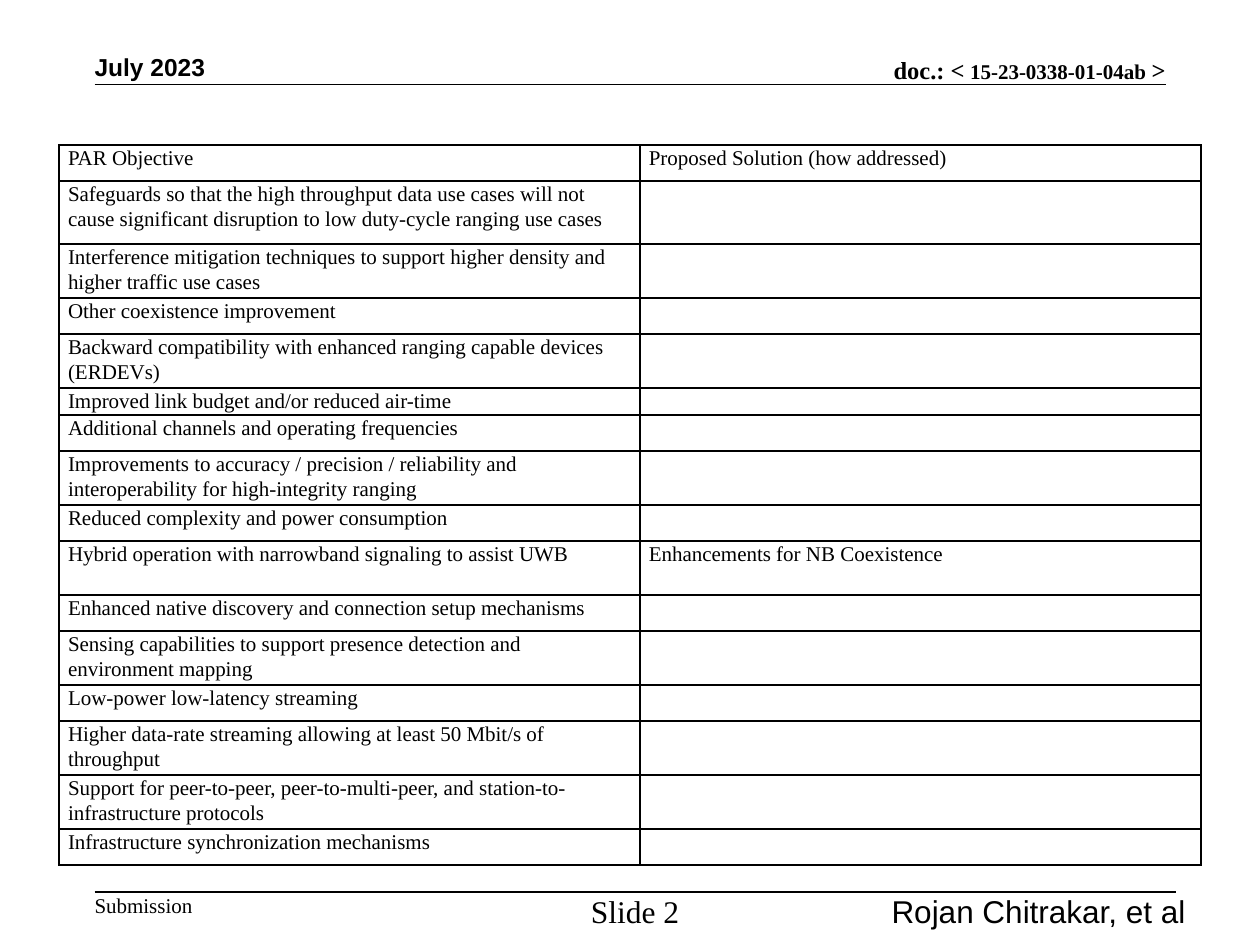
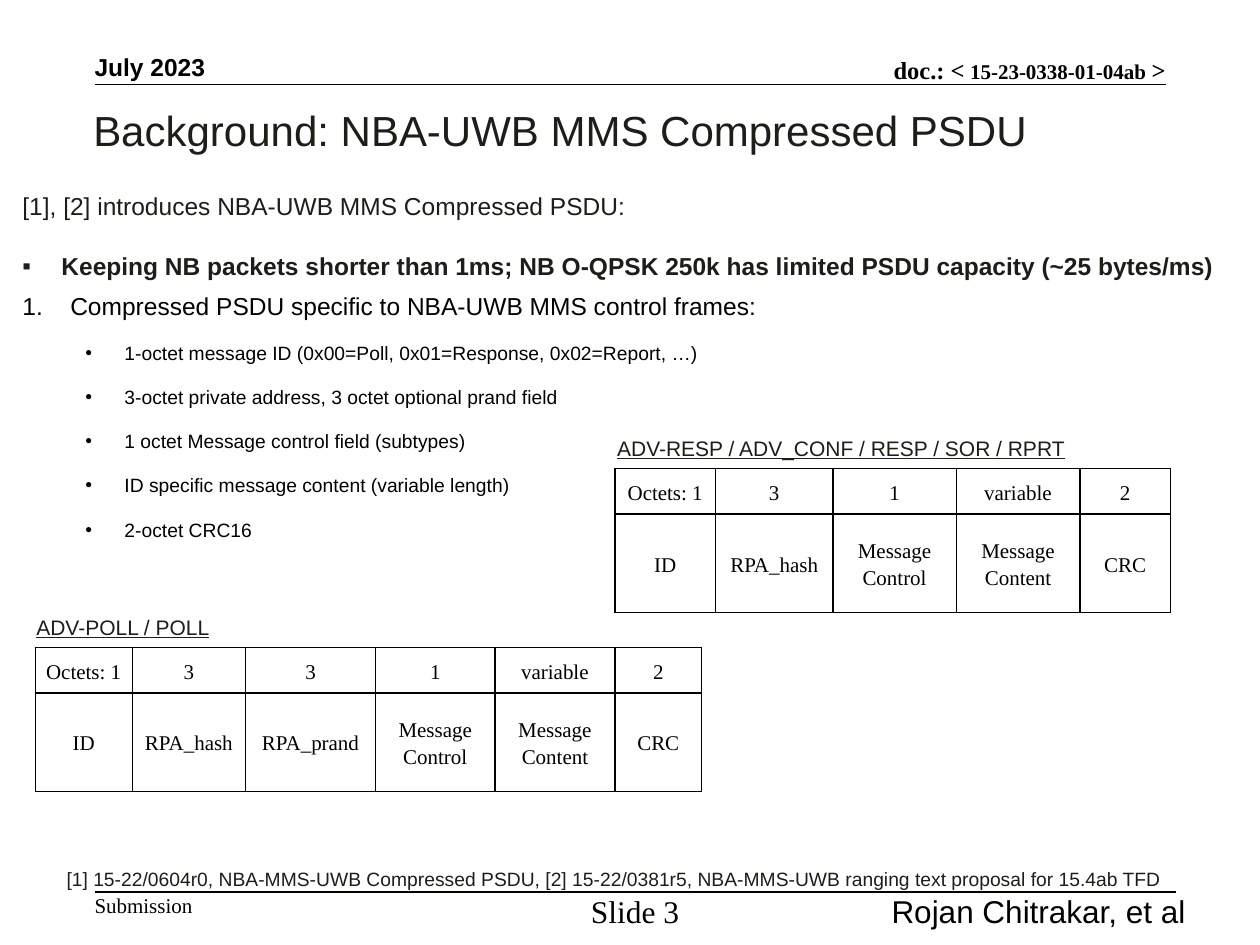
import pptx
import pptx.util
import pptx.dml.color
import pptx.enum.shapes
import pptx.enum.text
import pptx.oxml.ns
from lxml import etree

Pt = pptx.util.Pt
qn = pptx.oxml.ns.qn
ALIGN = pptx.enum.text.PP_ALIGN
ANCHOR = pptx.enum.text.MSO_ANCHOR
AUTO = pptx.enum.text.MSO_AUTO_SIZE

COLORS = {"ink": "000000", "body": "1D1D1A"}
SERIF, SANS = "Times New Roman", "Arial"

# The slide is a grid of 100 columns by 75 rows
SLIDE_W, SLIDE_H = pptx.util.Inches(10), pptx.util.Inches(7.5)
COL, ROW = SLIDE_W / 100, SLIDE_H / 75
EXACT = Pt(34.4)
NO_INSET = (0, 0, 0, 0)
BOX_INSET = (1, 0.5, 1, 0.5)
CELL_INSET = (0.7, 0, 0.7, 0)

# Row heights of the objectives table, in grid rows
ONE, TWO = 2.86, 4.29
OBJECTIVES = [
    ("PAR Objective", ONE, "Proposed Solution (how addressed)"),
    ("Safeguards so that the high throughput data use cases will not cause "
     "significant disruption to low duty-cycle ranging use cases", 5, ""),
    ("Interference mitigation techniques to support higher density and "
     "higher traffic use cases", TWO, ""),
    ("Other coexistence improvement", ONE, ""),
    ("Backward compatibility with enhanced ranging capable devices (ERDEVs)", TWO, ""),
    ("Improved link budget and/or reduced air-time", 2, ""),
    ("Additional channels and operating frequencies", ONE, ""),
    ("Improvements to accuracy / precision / reliability and "
     "interoperability for high-integrity ranging", TWO, ""),
    ("Reduced complexity and power consumption", ONE, ""),
    ("Hybrid operation with narrowband signaling to assist UWB", TWO,
     "Enhancements for NB Coexistence"),
    ("Enhanced native discovery and connection setup mechanisms", ONE, ""),
    ("Sensing capabilities to support presence detection and "
     "environment mapping", TWO, ""),
    ("Low-power low-latency streaming", ONE, ""),
    ("Higher data-rate streaming allowing at least 50 Mbit/s of throughput", TWO, ""),
    ("Support for peer-to-peer, peer-to-multi-peer, and "
     "station-to-infrastructure protocols", TWO, ""),
    ("Infrastructure synchronization mechanisms", ONE, ""),
]

MESSAGE_POINTS = [
    "1-octet message ID (0x00=Poll, 0x01=Response, 0x02=Report, …)",
    "3-octet private address, 3 octet optional prand field",
    "1 octet Message control field (subtypes)",
    "ID specific message content (variable length)",
    "2-octet CRC16",
]

# Frame fields: octets and name
ID, HASH, PRAND = ("Octets: 1", "ID"), ("3", "RPA_hash"), ("3", "RPA_prand")
TAIL = [("1", "Message\nControl"), ("variable", "Message Content"), ("2", "CRC")]


def apply(target, values):
    for name, value in values.items():
        setattr(target, name, value)


def set_insets(target, insets):
    sides = ("margin_left", "margin_top", "margin_right", "margin_bottom")
    apply(target, {side: int(v * COL) for side, v in zip(sides, insets)})


def add_run(p, text, size, font=SANS, color="ink", **style):
    r = p.add_run()
    r.text = text
    apply(r.font, {"size": Pt(size), "name": font, **style})
    r.font.color.rgb = pptx.dml.color.RGBColor.from_string(COLORS[color])


def add_box(slide, x, y, w, h, insets=NO_INSET, **frame):
    sp = slide.shapes.add_textbox(int(x * COL), int(y * ROW), int(w * COL), int(h * ROW))
    tf = sp.text_frame
    apply(tf, {"word_wrap": True, "auto_size": AUTO.SHAPE_TO_FIT_TEXT, **frame})
    set_insets(tf, insets)
    return tf


def add_label(slide, area, text, size, insets=NO_INSET, para=None, frame=None, **style):
    p = add_box(slide, *area, insets=insets, **(frame or {})).paragraphs[0]
    apply(p, para or {})
    add_run(p, text, size, **style)


def add_rule(slide, x1, x2, y):
    line = slide.shapes.add_connector(
        pptx.enum.shapes.MSO_CONNECTOR.STRAIGHT,
        int(x1 * COL), int(y * ROW), int(x2 * COL), int(y * ROW))
    line.line.width = Pt(1)
    line.line.color.rgb = pptx.dml.color.RGBColor.from_string(COLORS["ink"])
    etree.SubElement(line._element.spPr, qn("a:effectLst"))


def set_bullet(p, left, hang, mark):
    pPr = p._p.get_or_add_pPr()
    pPr.set("marL", str(int(left * COL)))
    pPr.set("indent", str(int(-hang * COL)))
    if mark == "1.":
        etree.SubElement(pPr, qn("a:buAutoNum"), type="arabicPeriod")
    else:
        etree.SubElement(pPr, qn("a:buFont"), typeface=SANS)
        etree.SubElement(pPr, qn("a:buChar"), char=mark)


def add_borders(cell):
    tcPr = cell._tc.get_or_add_tcPr()
    for i, side in enumerate(("a:lnL", "a:lnR", "a:lnT", "a:lnB")):
        ln = etree.Element(qn(side), w=str(Pt(1)))
        fill = etree.SubElement(ln, qn("a:solidFill"))
        etree.SubElement(fill, qn("a:srgbClr"), val=COLORS["ink"])
        tcPr.insert(i, ln)


def fill_cell(cell, text, para, anchor):
    cell.fill.background()
    cell.vertical_anchor = anchor
    set_insets(cell, CELL_INSET)
    add_borders(cell)
    tf = cell.text_frame
    for i, line in enumerate(text.split("\n")):
        p = tf.add_paragraph() if i else tf.paragraphs[0]
        apply(p, para)
        if line:
            add_run(p, line, 12, font=SERIF)
        else:
            etree.SubElement(p._p, qn("a:endParaRPr"), sz="1200")


def add_table(slide, x, y, widths, heights, rows, para, anchor=ANCHOR.TOP):
    table = slide.shapes.add_table(
        len(rows), len(widths), int(x * COL), int(y * ROW),
        int(sum(widths) * COL), int(sum(heights) * ROW)).table
    apply(table, {"first_row": False, "horz_banding": False})
    for column, width in zip(table.columns, widths):
        column.width = int(width * COL)
    for row, height, texts in zip(table.rows, heights, rows):
        row.height = int(height * ROW)
        for cell, text in zip(row.cells, texts):
            fill_cell(cell, text, para, anchor)


def add_frame_format(slide, x, y, name_area, name, widths, fields):
    """Underlined frame name with its table of octets and fields."""
    add_label(slide, name_area, name, 12, BOX_INSET, {"line_spacing": EXACT},
              {"vertical_anchor": ANCHOR.MIDDLE}, color="body", underline=True)
    add_table(slide, x, y, widths, (3.6, 7.8), list(zip(*fields)),
              {"alignment": ALIGN.CENTER, "line_spacing": 1.15}, ANCHOR.MIDDLE)


def new_slide(prs, number):
    """Blank slide with the shared header and footer."""
    slide = prs.slides.add_slide(prs.slide_layouts[6])
    bottom = {"vertical_anchor": ANCHOR.BOTTOM}
    right = {"alignment": ALIGN.RIGHT}
    # Header
    add_label(slide, (7.5, 4.1, 17.5, 2.4), "July 2023", 14, frame=bottom, bold=True)
    p = add_box(slide, 34.3, 4.3, 58.2, 2.4, **bottom).paragraphs[0]
    apply(p, right)
    for text, size in (("doc.: <", 14), (" 15-23-0338-01-04ab ", 12), (">", 14)):
        add_run(p, text, size, font=SERIF, bold=True)
    add_rule(slide, 7.5, 92.5, 6.7)
    # Footer
    add_rule(slide, 7.5, 93.3, 70.8)
    add_label(slide, (7.5, 70.8, 7.8, 2), "Submission", 12, font=SERIF)
    add_label(slide, (45.4, 70.8, 10, 2.8), f"Slide {number}", 18, font=SERIF,
              para={"alignment": ALIGN.CENTER})
    add_label(slide, (54.7, 70.8, 39.4, 2), "Rojan Chitrakar, et al", 18, para=right)
    return slide


def build_objectives(prs):
    slide = new_slide(prs, 2)
    add_table(slide, 4.7, 11.5, (46.1, 44.5), [h for _, h, _ in OBJECTIVES],
              [(goal, solution) for goal, _, solution in OBJECTIVES],
              {"line_spacing": 1.07, "space_after": Pt(8)})


def build_background(prs):
    slide = new_slide(prs, 3)
    add_label(slide, (7.4, 7.5, 89.9, 5.9), "Background: NBA-UWB MMS Compressed PSDU", 24,
              para={"line_spacing": Pt(34.3)}, frame={"auto_size": AUTO.NONE}, color="body")
    add_label(slide, (4.3, 65.4, 89.4, 4.9),
              "[1] 15-22/0604r0, NBA-MMS-UWB Compressed PSDU, "
              "[2] 15-22/0381r5, NBA-MMS-UWB ranging text proposal for 15.4ab TFD",
              11, BOX_INSET, {"line_spacing": EXACT}, {"word_wrap": False}, color="body")

    # Introduction and numbered points: text, bullet, paragraph format, run format
    exact = {"line_spacing": EXACT}
    spaced = {"space_before": Pt(6), "space_after": Pt(6)}
    points = [
        ("[1], [2] introduces NBA-UWB MMS Compressed PSDU:", None, exact,
         {"size": 14, "color": "body"}),
        ("Keeping NB packets shorter than 1ms; NB O-QPSK 250k has limited PSDU "
         "capacity (~25 bytes/ms)", (3.1, 3.1, "▪"), exact,
         {"size": 14, "color": "body", "bold": True}),
        ("Compressed PSDU specific to NBA-UWB MMS control frames:",
         (3.8, 3.8, "1."), spaced, {"size": 14}),
    ]
    points += [(text, (8.1, 3.1, "•"), {"level": 1, **spaced}, {"size": 11})
               for text in MESSAGE_POINTS]
    tf = add_box(slide, 0.8, 12.2, 98, 32.6, BOX_INSET)
    for i, (text, bullet, para, style) in enumerate(points):
        p = tf.add_paragraph() if i else tf.paragraphs[0]
        apply(p, para)
        if bullet:
            set_bullet(p, *bullet)
        add_run(p, text, **style)

    # Frame formats
    add_frame_format(slide, 2.8, 51.4, (1.9, 45.8, 40.2, 5.1), "ADV-POLL / POLL",
                     (7.7, 9, 10.3, 9.5, 9.5, 6.9), [ID, HASH, PRAND, *TAIL])
    add_frame_format(slide, 48.8, 37.2, (48, 31.6, 50.4, 5.1),
                     "ADV-RESP / ADV_CONF / RESP / SOR / RPRT",
                     (8, 9.3, 9.8, 9.8, 7.2), [ID, HASH, *TAIL])


def main():
    prs = pptx.Presentation()
    apply(prs, {"slide_width": SLIDE_W, "slide_height": SLIDE_H})
    build_objectives(prs)
    build_background(prs)
    prs.save("out.pptx")


if __name__ == "__main__":
    main()
